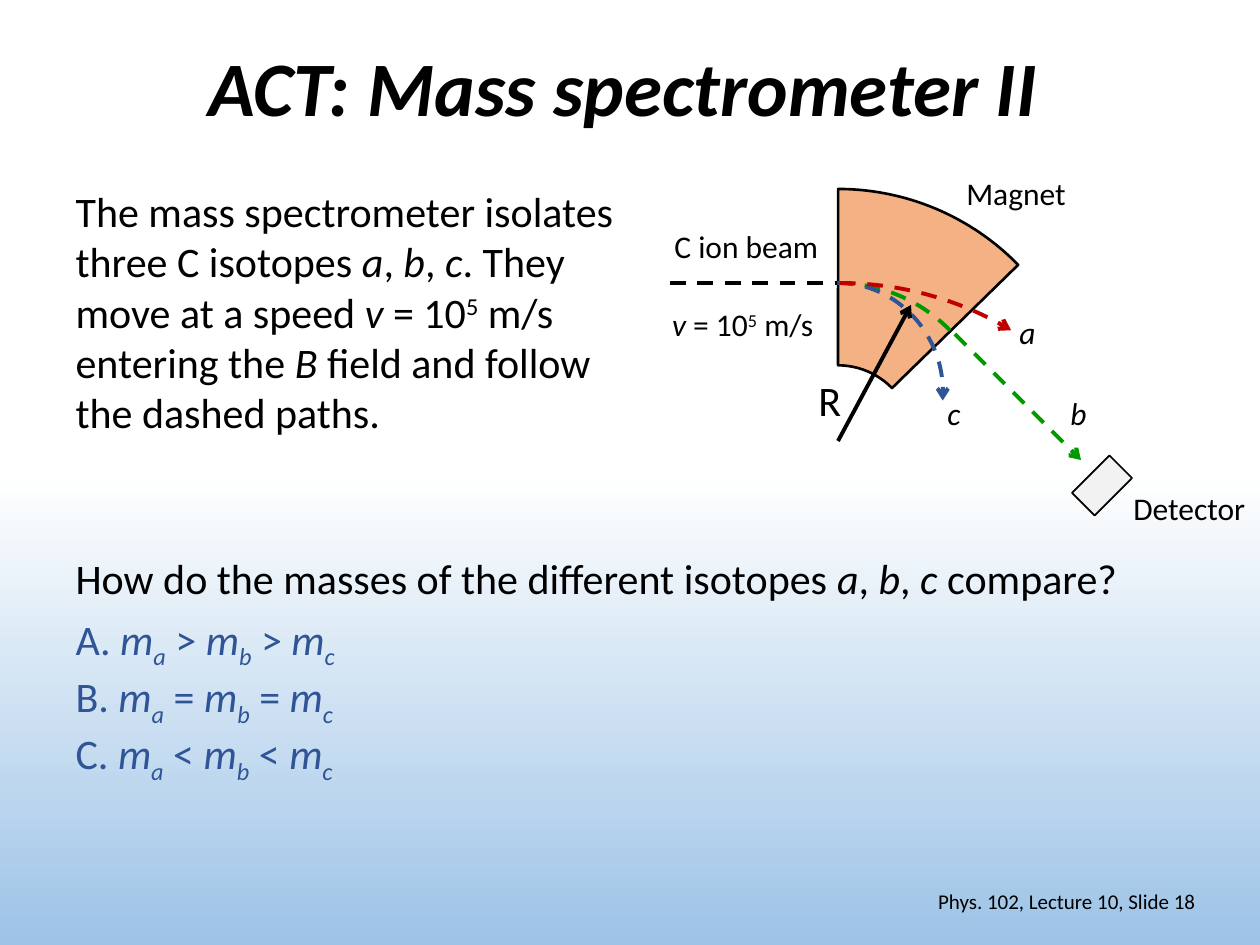
from lxml.etree import SubElement
from pptx import Presentation
from pptx.dml.color import RGBColor
from pptx.enum.dml import MSO_LINE
from pptx.enum.shapes import MSO_CONNECTOR, MSO_SHAPE
from pptx.enum.text import MSO_ANCHOR, MSO_AUTO_SIZE, PP_ALIGN
from pptx.oxml.ns import qn
from pptx.util import Emu, Pt

SCALE = 914400 / 126
BLACK = RGBColor(0, 0, 0)
WHITE = RGBColor(255, 255, 255)
SKY = RGBColor(0x9D, 0xC3, 0xE6)
MAGNET = RGBColor(0xF4, 0xB1, 0x83)
DETECTOR = RGBColor(0xF2, 0xF2, 0xF2)
RED = RGBColor(0xC0, 0, 0)
GREEN = RGBColor(0, 0x99, 0)
BLUE = RGBColor(0x2F, 0x55, 0x97)


def px(*lengths):
    """Turn pixel lengths into EMU."""
    return [Emu(round(length * SCALE)) for length in lengths]


def italic(text):
    """Describe an italic piece of text."""
    return text, True, 0


def plain(text, baseline=0):
    """Describe an upright piece of text, raised by baseline percent."""
    return text, False, baseline


ISOTOPES = [italic("a"), plain(", "), italic("b"), plain(", "), italic("c")]
SPEED = [italic("v"), plain(" = 10"), plain("5", 30), plain(" m/s")]


def write(paragraph, pieces, size, color=BLACK):
    """Fill a paragraph with pieces of text."""
    for text, slanted, baseline in pieces:
        run = paragraph.add_run()
        run.text = text
        run.font.name = "Calibri"
        run.font.size = Pt(size)
        run.font.italic = slanted
        run.font.color.rgb = color
        if baseline:
            run._r.get_or_add_rPr().set("baseline", str(baseline * 1000))


def place(placeholder, box):
    """Move a placeholder to a box and return its text frame."""
    placeholder.left, placeholder.top, placeholder.width, placeholder.height = px(*box)
    frame = placeholder.text_frame
    frame.auto_size = MSO_AUTO_SIZE.NONE
    return frame


def set_bullet(paragraph, numbered=False):
    """Set the paragraph's lettering, indent and spacing."""
    properties = paragraph._p.get_or_add_pPr()
    properties.set("marL", "0")
    properties.set("indent", "-457200" if numbered else "0")
    if numbered:
        SubElement(properties, qn("a:buFont"), typeface="+mj-lt")
        SubElement(properties, qn("a:buAutoNum"), type="alphaUcPeriod")
    else:
        SubElement(properties, qn("a:buNone"))
    paragraph.space_before = Pt(0)


def add_label(slide, box, pieces, size=18):
    """Add a one-line text box and return its frame."""
    frame = slide.shapes.add_textbox(*px(*box)).text_frame
    frame.word_wrap = False
    write(frame.paragraphs[0], pieces, size)
    return frame


def style_line(line, color, width, dashed=False, arrow=False):
    """Set the look of a line."""
    line.color.rgb = color
    line.width = Pt(width)
    if dashed:
        line.dash_style = MSO_LINE.DASH
    if arrow:
        SubElement(line._get_or_add_ln(), qn("a:tailEnd"), type="arrow")


def add_form(slide, preset, box, color=None, adjustments=()):
    """Add a preset shape, unfilled if it has no color."""
    form = slide.shapes.add_shape(preset, *px(*box))
    form.shadow.inherit = False
    for index, value in enumerate(adjustments):
        form.adjustments[index] = value
    if color is None:
        form.fill.background()
    else:
        form.fill.solid()
        form.fill.fore_color.rgb = color
    return form


def add_line(slide, ends, color, dashed, arrow):
    """Add a straight line."""
    connector = slide.shapes.add_connector(MSO_CONNECTOR.STRAIGHT, *px(*ends))
    style_line(connector.line, color, 2.25, dashed, arrow)
    SubElement(connector._element.spPr, qn("a:effectLst"))


def paint_background(slide):
    """Fade the background from white to sky blue."""
    fill = slide.background.fill
    fill.gradient()
    fill.gradient_angle = 270
    for stop, position, color in zip(fill.gradient_stops, (0.5, 1), (WHITE, SKY)):
        stop.position = position
        stop.color.rgb = color


def add_title(slide, box):
    """Fill the title."""
    frame = place(slide.shapes.title, box)
    frame.vertical_anchor = MSO_ANCHOR.MIDDLE
    heading = frame.paragraphs[0]
    heading.alignment = PP_ALIGN.CENTER
    heading.line_spacing = 0.9
    write(heading, [italic("ACT: Mass spectrometer II ")], 44)
    heading.runs[0].font.bold = True


def add_setup(slide, box):
    """Describe the experiment."""
    setup = place(slide.placeholders[1], box).paragraphs[0]
    set_bullet(setup)
    write(setup, [plain("The mass spectrometer isolates three C isotopes "), *ISOTOPES,
                  plain(". They move at a speed "), *SPEED, plain(" entering the "),
                  italic("B"), plain(" field and follow the dashed paths.")], 24)


def add_question(slide, box):
    """Ask the question and list its answers."""
    frame = place(slide.placeholders[2], box)
    question = frame.paragraphs[0]
    set_bullet(question)
    question.space_after = Pt(6)
    write(question, [plain("How do the masses of the different isotopes "),
                     *ISOTOPES, plain(" compare?")], 24)
    for relation in ">=<":
        pieces = []
        for isotope, lead in zip("abc", (" ", f" {relation} ", f" {relation} ")):
            pieces += [plain(lead), italic("m"), (isotope, True, -25)]
        answer = frame.add_paragraph()
        set_bullet(answer, numbered=True)
        write(answer, pieces, 24, BLUE)


def add_spectrometer(slide, left, top):
    """Draw the magnet, the ion paths and the detector."""
    def at(x, y, width, height):
        return left + x, top + y, width, height

    def add_path(box, end, color, arrow):
        path = add_form(slide, MSO_SHAPE.ARC, at(*box), adjustments=(162, end))
        style_line(path.line, color, 2.25, True, arrow)

    def add_segment(x1, y1, x2, y2, color, dashed, arrow):
        add_line(slide, (left + x1, top + y1, left + x2, top + y2), color, dashed, arrow)

    magnet = add_form(slide, MSO_SHAPE.BLOCK_ARC, at(61, 24, 504, 504), MAGNET,
                      (162.03, 189.4, 0.35))
    style_line(magnet.line, BLACK, 1.5)
    add_segment(145, 118, 313, 118, BLACK, True, False)
    add_path((155, 118, 315, 315), 189.64, GREEN, False)
    add_path((208, 118, 210, 220), 2.46, BLUE, True)
    add_segment(430, 169, 556, 295, GREEN, True, True)
    add_segment(313, 276, 386, 140, BLACK, False, True)
    detector = add_form(slide, MSO_SHAPE.RECTANGLE, at(561, 294, 32, 53), DETECTOR)
    detector.rotation = 45
    style_line(detector.line, BLACK, 1)
    add_path((0, 118, 630, 588), 182.85, RED, True)

    add_label(slide, at(281, 203, 48, 63), [plain("R")], 24)
    for isotope, x, y in (("a", 482, 142), ("b", 533, 223), ("c", 410, 223)):
        add_label(slide, at(x, y, 42, 50), [italic(isotope)])
    for name, x, y, width in (("Detector", 596, 318, 139), ("C ion beam", 137, 56, 171),
                              ("Magnet", 429, 3, 126)):
        add_label(slide, at(x, y, width, 50), [plain(name)])
    speed = add_label(slide, at(147, 140, 168, 38), SPEED)
    speed.word_wrap = True
    speed.margin_left = speed.margin_right = speed.margin_top = speed.margin_bottom = 0


def add_footer(slide, box):
    """Add the lecture and slide number."""
    frame = add_label(slide, box, [plain("Phys. 102, Lecture 10, Slide 18")], 12)
    frame.word_wrap = True
    frame.vertical_anchor = MSO_ANCHOR.MIDDLE
    frame.paragraphs[0].alignment = PP_ALIGN.RIGHT


def main():
    """Build and save the slide."""
    deck = Presentation()
    deck.slide_width, deck.slide_height = px(1260, 945)
    slide = deck.slides.add_slide(deck.slide_layouts.get_by_name("Two Content"))
    paint_background(slide)
    add_title(slide, (89, 0, 1086, 183))
    add_setup(slide, (63, 179, 588, 267))
    add_spectrometer(slide, 525, 165)
    add_question(slide, (63, 546, 1092, 252))
    add_footer(slide, (890, 876, 318, 50))
    deck.save("out.pptx")


if __name__ == "__main__":
    main()
